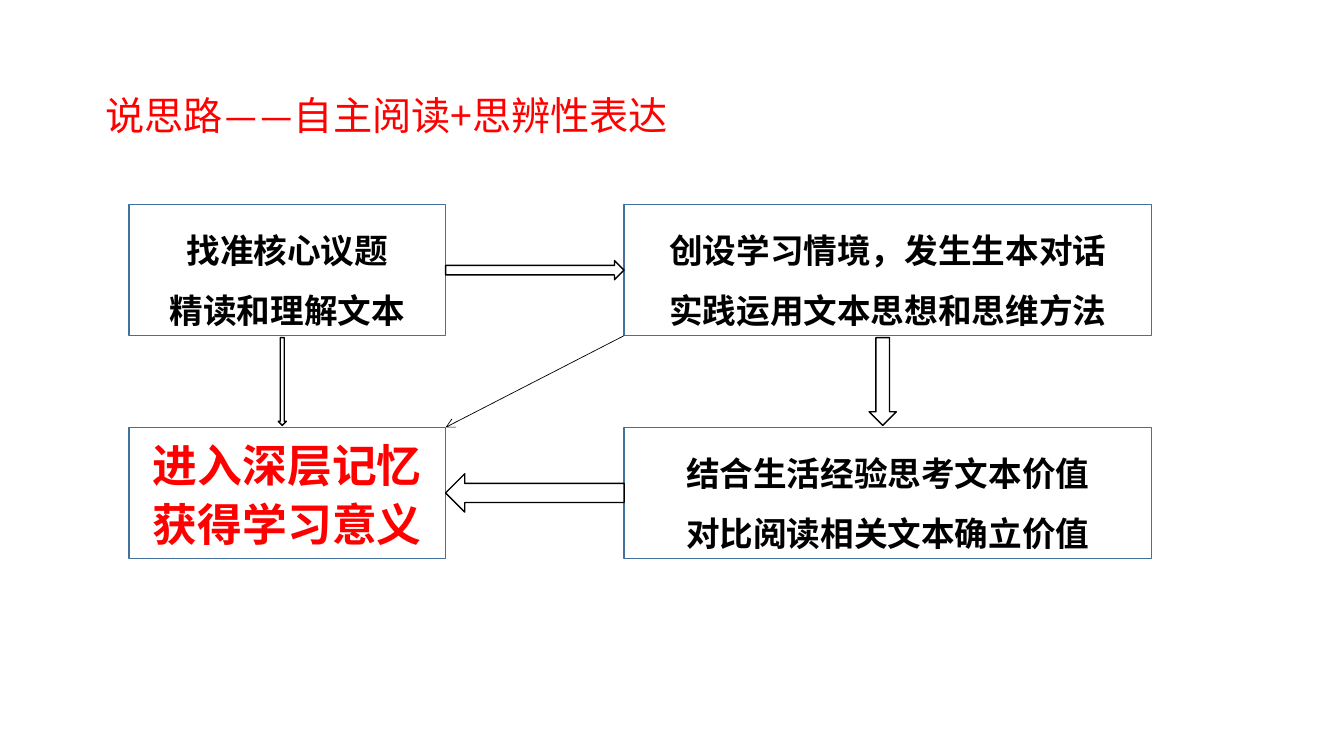
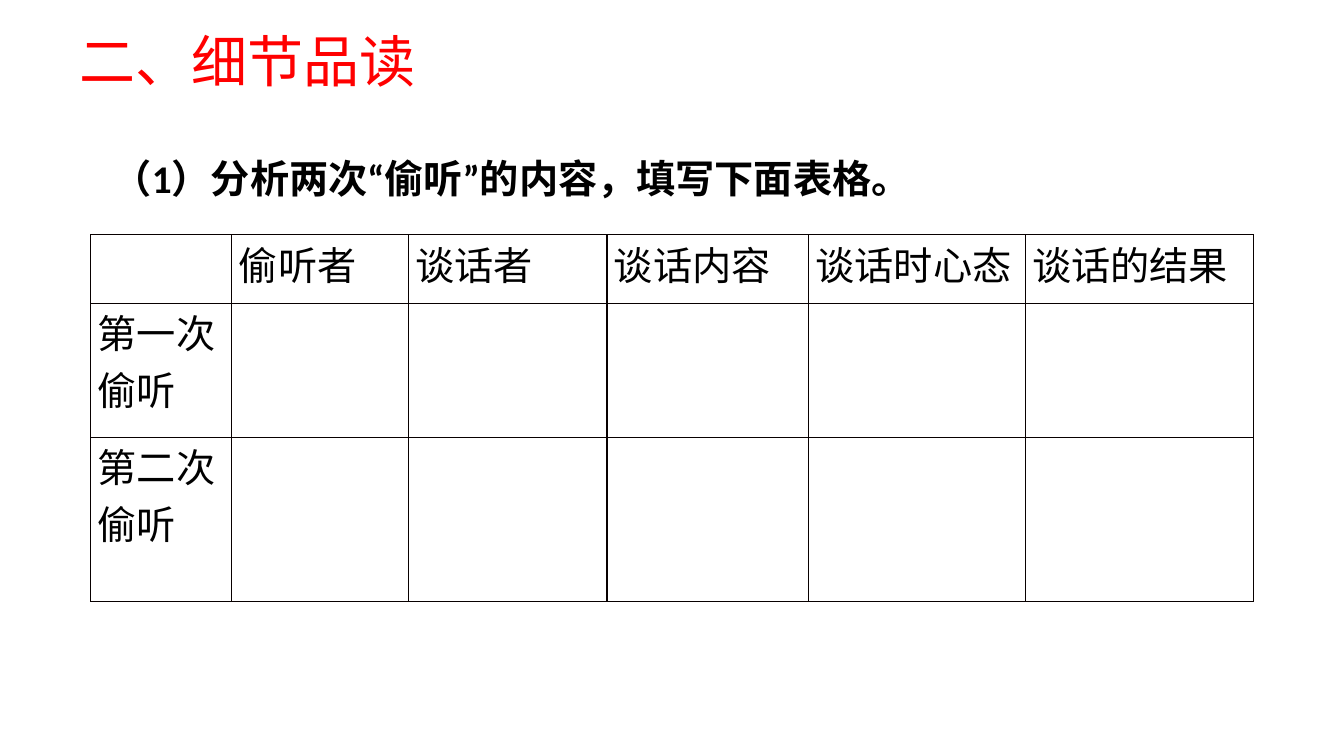
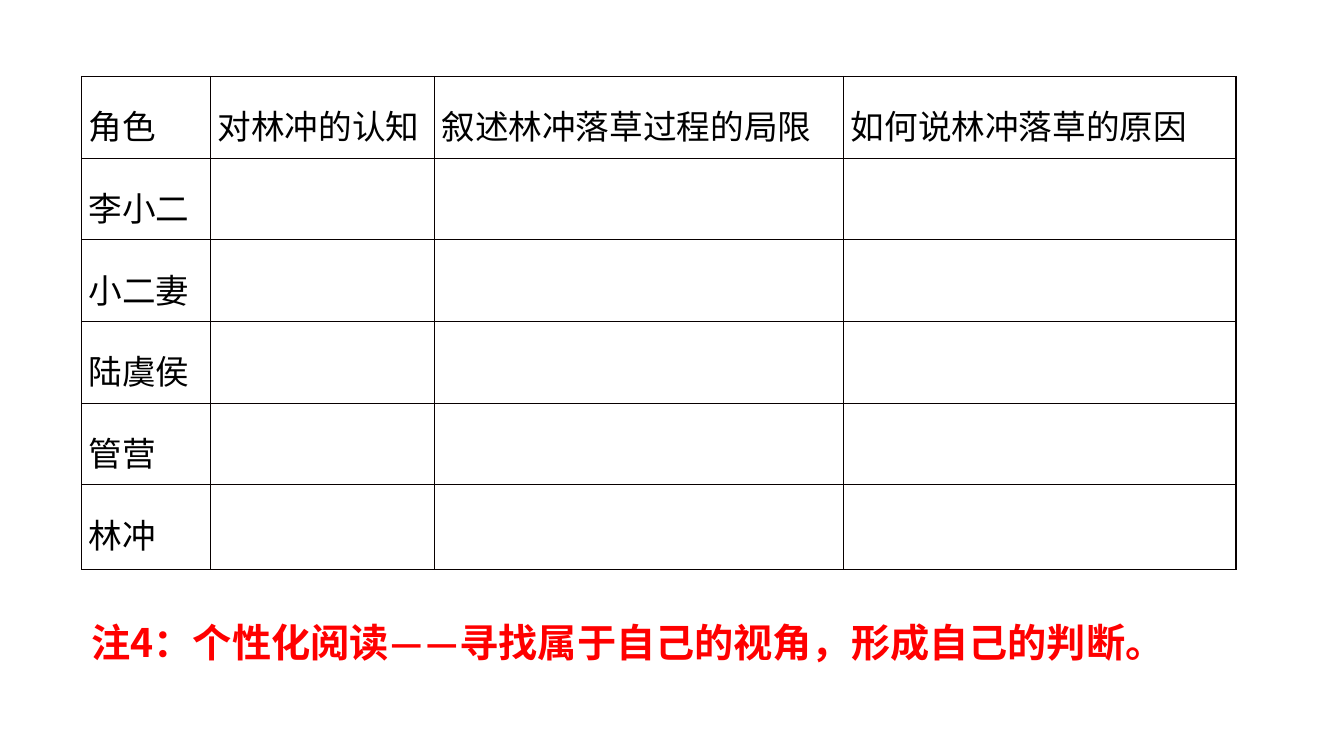
from pptx import Presentation
from pptx.dml.color import RGBColor
from pptx.enum.shapes import MSO_CONNECTOR, MSO_SHAPE
from pptx.enum.text import MSO_ANCHOR as Anchor, MSO_AUTO_SIZE as AutoSize, PP_ALIGN as Align
from pptx.oxml.ns import qn
from pptx.util import Inches, Pt
from lxml.etree import SubElement

RED, BLACK, WHITE, BLUE, BORDER = "FF0000", "000000", "FFFFFF", "41719C", "080000"
CJK, LATIN = "Noto Sans CJK SC", "Calibri"


def color(value):
    return RGBColor.from_string(value)


def inches(*lengths):
    return [Inches(length) for length in lengths]


def write(frame, lines, size, ink=BLACK, bold=False, spacing=1.0, align=Align.LEFT,
          font=CJK, east_asian=LATIN, indent=None):
    """Fill a text frame with one equally formatted paragraph per line."""
    frame.word_wrap = True
    for number, line in enumerate(lines):
        paragraph = frame.paragraphs[0] if number == 0 else frame.add_paragraph()
        paragraph.alignment, paragraph.line_spacing = align, spacing
        if indent:
            paragraph._p.get_or_add_pPr().set("indent", str(Inches(indent)))
        run = paragraph.add_run()
        run.text = line
        for name, value in {"size": Pt(size), "bold": bold, "name": font}.items():
            setattr(run.font, name, value)
        run.font.color.rgb = color(ink)
        SubElement(run._r.get_or_add_rPr(), qn("a:ea"), typeface=east_asian)


def add_text(slide, box, text, size, anchor=Anchor.TOP, **style):
    frame = slide.shapes.add_textbox(*inches(*box)).text_frame
    frame.vertical_anchor = anchor
    write(frame, [text], size, **style)


def add_outline(slide, kind, box, line=BLACK, fill=None):
    shape = slide.shapes.add_shape(kind, *inches(*box))
    shape.shadow.inherit = False
    if fill:
        shape.fill.solid()
        shape.fill.fore_color.rgb = color(fill)
    else:
        shape.fill.background()
    shape.line.color.rgb = color(line)
    shape.line.width = Pt(1)
    return shape


def add_thin_arrow(slide, start, end):
    connector = slide.shapes.add_connector(MSO_CONNECTOR.STRAIGHT, *inches(*start, *end))
    connector.line.color.rgb = color(BLACK)
    connector.line.width = Pt(0.5)
    SubElement(connector.line._get_or_add_ln(), qn("a:tailEnd"), type="arrow")
    SubElement(connector._element.spPr, qn("a:effectLst"))


def add_flow(slide, left, top):
    """Four steps on a two by two grid, with arrows in the gaps."""
    widths, height, gap_x, gap_y = (3.14, 5.23), 1.3, 1.77, 0.91
    columns = (left, left + widths[0] + gap_x)
    rows = (top, top + height + gap_y)
    steps = [
        (0, 0, ["找准核心议题", "精读和理解文本"], {}),
        (1, 0, ["创设学习情境，发生生本对话", "实践运用文本思想和思维方法"], {}),
        (1, 1, ["结合生活经验思考文本价值", "对比阅读相关文本确立价值"], {}),
        (0, 1, ["进入深层记忆", "获得学习意义"], {"size": 32, "ink": RED, "spacing": 1.1}),
    ]
    for column, row, lines, style in steps:
        box = (columns[column], rows[row], widths[column], height)
        frame = add_outline(slide, MSO_SHAPE.RECTANGLE, box, BLUE).text_frame
        frame.vertical_anchor = Anchor.TOP
        write(frame, lines, **{"size": 24, "bold": True, "spacing": 1.5,
                               "align": Align.CENTER, **style})

    gap_left, gap_top = left + widths[0], top + height
    for kind, row, thickness, fill in [(MSO_SHAPE.RIGHT_ARROW, 0, 0.19, None),
                                       (MSO_SHAPE.LEFT_ARROW, 1, 0.38, WHITE)]:
        middle = rows[row] + height / 2
        add_outline(slide, kind, (gap_left, middle - thickness / 2, gap_x, thickness), fill=fill)
    for column, thickness, fill in [(1, 0.27, WHITE), (0, 0.08, None)]:
        middle = columns[column] + widths[column] / 2 - 0.05
        add_outline(slide, MSO_SHAPE.DOWN_ARROW,
                    (middle - thickness / 2, gap_top + 0.02, thickness, gap_y - 0.04), fill=fill)
    add_thin_arrow(slide, (columns[1], gap_top), (gap_left, rows[1]))


def add_border(cell):
    properties = cell._tc.get_or_add_tcPr()
    for side in ("lnL", "lnR", "lnT", "lnB"):
        line = SubElement(properties, qn(f"a:{side}"), w=str(Pt(1)))
        SubElement(SubElement(line, qn("a:solidFill")), qn("a:srgbClr"), val=BORDER)


def add_worksheet(slide, left, top, widths, heights, headings, labels, size, spacing=1.0):
    """A ruled table with headings, row labels and cells left to fill in."""
    table = slide.shapes.add_table(len(heights), len(widths),
                                   *inches(left, top, sum(widths), sum(heights))).table
    table.first_row = table.horz_banding = False
    for column, width in zip(table.columns, widths):
        column.width = Inches(width)
    for row, height in zip(table.rows, heights):
        row.height = Inches(height)
    for cell in table.iter_cells():
        cell.margin_left = cell.margin_right = Inches(0.07)
        cell.margin_top = cell.margin_bottom = 0
        add_border(cell)
        cell.fill.background()
    cells = [table.cell(0, column) for column in range(len(widths))]
    cells += [table.cell(row, 0) for row in range(1, len(heights))]
    for cell, text in zip(cells, headings + labels):
        if text:
            write(cell.text_frame, [text], size, spacing=spacing, east_asian=CJK)


def build_approach(slide):
    add_text(slide, (0.95, 0.62, 12.19, 0.81), "说思路——自主阅读+思辨性表达", 28,
             ink=RED, spacing=1.5)
    add_flow(slide, 1.28, 2.03)


def build_details(slide):
    add_text(slide, (0.69, 1.2, 9.32, 0.85), "（1）分析两次“偷听”的内容，填写下面表格。", 28,
             bold=True, spacing=1.6, font=LATIN, indent=0.33)
    add_worksheet(slide, 0.9, 2.33, [1.4, 1.75, 1.97, 2, 2.15, 2.26], [0.68, 1.33, 1.63],
                  ["", "偷听者", "谈话者", "谈话内容", "谈话时心态", "谈话的结果"],
                  ["第一次偷听", "第二次偷听"], 28)
    add_text(slide, (0.69, 0.27, 11.36, 0.74), "二、细节品读", 40, Anchor.MIDDLE,
             ink=RED, spacing=0.9)


def build_viewpoints(slide):
    add_worksheet(slide, 0.81, 0.76, [1.28, 2.22, 4.06, 3.89], [0.81] * 5 + [0.84],
                  ["角色", "对林冲的认知", "叙述林冲落草过程的局限", "如何说林冲落草的原因"],
                  ["李小二", "小二妻", "陆虞侯", "管营", "林冲"], 24, 1.5)
    add_text(slide, (0.81, 5.85, 11.5, 0.81),
             "注4：个性化阅读——寻找属于自己的视角，形成自己的判断。", 28,
             ink=RED, bold=True, spacing=1.5)


def main():
    presentation = Presentation()
    presentation.slide_width, presentation.slide_height = inches(13.33, 7.5)
    for build in (build_approach, build_details, build_viewpoints):
        build(presentation.slides.add_slide(presentation.slide_layouts[6]))
    presentation.save("out.pptx")


if __name__ == "__main__":
    main()
